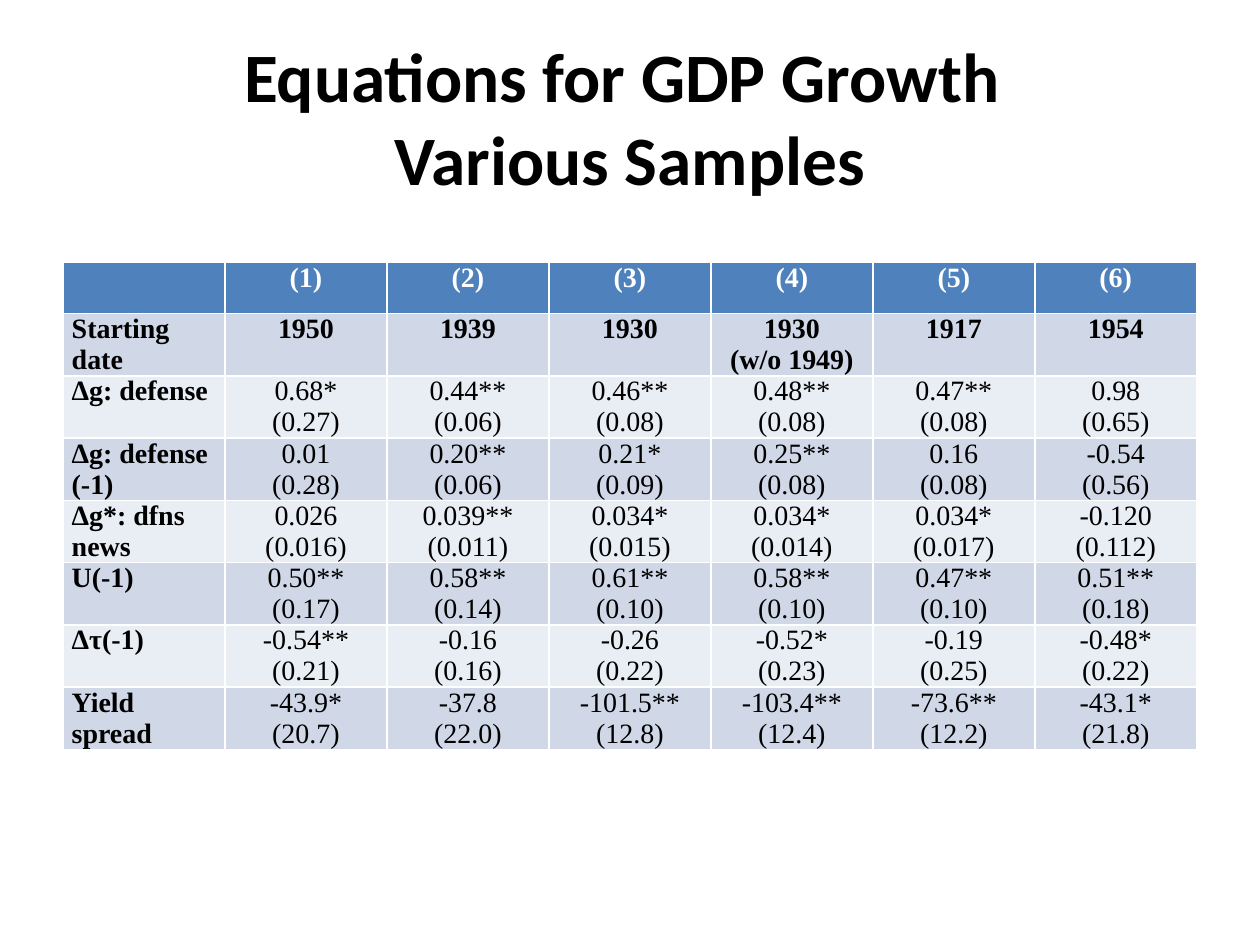
from pptx import Presentation
from pptx.dml.color import RGBColor
from pptx.enum import text
from pptx.util import Pt

HEADER, BAND_DARK, BAND_LIGHT = "4F81BD", "D0D8E8", "E9EDF4"
WHITE, BLACK = "FFFFFF", "000000"
COL_WIDTH, ROW_HEIGHT = 92.57, 29.2

# A "|" separates the paragraphs of a cell.
ROWS = [
    ["", "(1)", "(2)", "(3)", "(4)", "(5)", "(6)"],
    ["Starting date", "1950", "1939", "1930", "1930|(w/o 1949)", "1917", "1954"],
    ["Δg: defense", "0.68*|(0.27)", "0.44**|(0.06)", "0.46**|(0.08)",
     "0.48**|(0.08)", "0.47**|(0.08)", "0.98|(0.65)"],
    ["Δg: defense|(-1)", "0.01|(0.28)", "0.20**|(0.06)", "0.21*|(0.09)",
     "0.25**|(0.08)", "0.16|(0.08)", "-0.54|(0.56)"],
    ["Δg*: dfns|news", "0.026|(0.016)", "0.039**|(0.011)", "0.034*|(0.015)",
     "0.034*|(0.014)", "0.034*|(0.017)", "-0.120|(0.112)"],
    ["U(-1)", "0.50**|(0.17)", "0.58**|(0.14)", "0.61**|(0.10)",
     "0.58**|(0.10)", "0.47**|(0.10)", "0.51**|(0.18)"],
    ["Δτ(-1)", "-0.54**|(0.21)", "-0.16|(0.16)", "-0.26|(0.22)",
     "-0.52*|(0.23)", "-0.19|(0.25)", "-0.48*|(0.22)"],
    ["Yield|spread", "-43.9*|(20.7)", "-37.8|(22.0)", "-101.5**|(12.8)",
     "-103.4**|(12.4)", "-73.6**|(12.2)", "-43.1*|(21.8)"],
]


def rgb(color):
    return RGBColor.from_string(color)


def set_attrs(obj, values):
    for name, value in values.items():
        setattr(obj, name, value)


def format_font(font, name, size, color, bold):
    set_attrs(font, {"name": name, "size": Pt(size), "bold": bold})
    font.color.rgb = rgb(color)


def add_title(s, words):
    sp = s.shapes.title
    set_attrs(sp, {"left": Pt(36), "top": Pt(21.6),
                   "width": Pt(648), "height": Pt(90)})
    tf = sp.text_frame
    set_attrs(tf, {"text": words, "auto_size": text.MSO_AUTO_SIZE.NONE,
                   "vertical_anchor": text.MSO_ANCHOR.MIDDLE})
    p = tf.paragraphs[0]
    p.alignment = text.PP_ALIGN.CENTER
    for r in p.runs:
        format_font(r.font, "Calibri", 39.6, BLACK, True)


def fill_cell(cell, words, fill, color, bold, align):
    set_attrs(cell, {"margin_left": Pt(5), "margin_right": Pt(5),
                     "margin_top": 0, "margin_bottom": 0})
    cell.fill.solid()
    cell.fill.fore_color.rgb = rgb(fill)
    cell.text_frame.text = words.replace("|", "\n")
    for p in cell.text_frame.paragraphs:
        p.alignment = align
        format_font(p.font, "Times New Roman", 16, color, bold)
        for r in p.runs:
            format_font(r.font, "Times New Roman", 16, color, bold)


def add_results_table(s, rows):
    n_rows, n_cols = len(rows), len(rows[0])
    table = s.shapes.add_table(n_rows, n_cols, Pt(36), Pt(150),
                               Pt(COL_WIDTH * n_cols),
                               Pt(ROW_HEIGHT * n_rows)).table
    for col in table.columns:
        col.width = Pt(COL_WIDTH)
    for row in table.rows:
        row.height = Pt(ROW_HEIGHT)
    for i, row in enumerate(rows):
        fill = HEADER if i == 0 else BAND_DARK if i % 2 else BAND_LIGHT
        for j, words in enumerate(row):
            fill_cell(table.cell(i, j), words, fill,
                      color=BLACK if i else WHITE,
                      bold=i < 2 or j == 0,
                      align=text.PP_ALIGN.CENTER if j else text.PP_ALIGN.LEFT)


def main():
    prs = Presentation()
    set_attrs(prs, {"slide_width": Pt(720), "slide_height": Pt(540)})
    s = prs.slides.add_slide(prs.slide_layouts[5])
    add_title(s, "Equations for GDP Growth \vVarious Samples")
    add_results_table(s, ROWS)
    prs.save("out.pptx")


if __name__ == "__main__":
    main()
